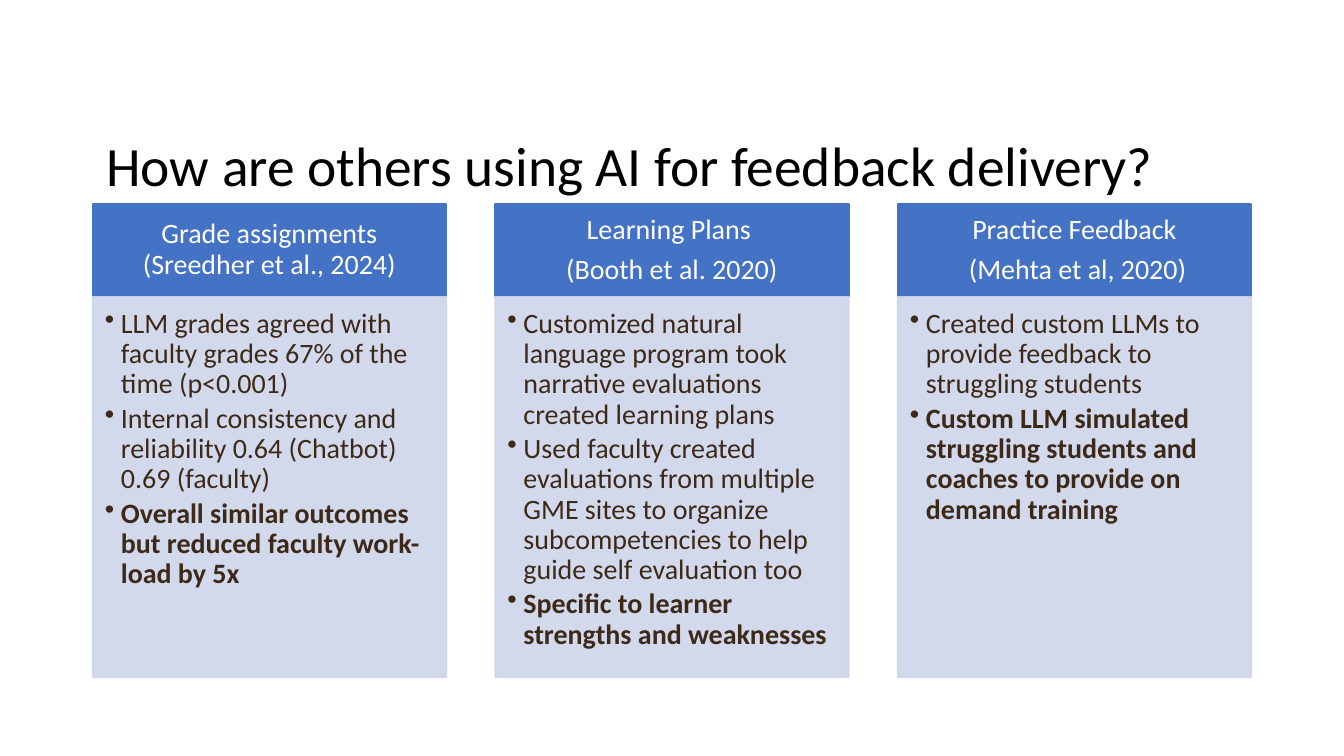
import dataclasses

import lxml.etree
import pptx
import pptx.dml.color
import pptx.enum.shapes
import pptx.enum.text
import pptx.oxml.ns
import pptx.util

Inches = pptx.util.Inches
RGBColor = pptx.dml.color.RGBColor
Align = pptx.enum.text.PP_ALIGN
Anchor = pptx.enum.text.MSO_ANCHOR
qn = pptx.oxml.ns.qn

BLACK = RGBColor(0x00, 0x00, 0x00)
WHITE = RGBColor(0xFF, 0xFF, 0xFF)
BLUE = RGBColor(0x44, 0x72, 0xC4)
PALE_BLUE = RGBColor(0xCF, 0xD5, 0xEA)
BROWN = RGBColor(0x3D, 0x29, 0x17)

SLIDE_WIDTH = Inches(10)
SLIDE_HEIGHT = SLIDE_WIDTH * 9 // 16  # widescreen
LEFT, CONTENT_WIDTH = 0.69, 8.62
COLUMN_WIDTH = 2.63
HEADER_TOP, HEADER_HEIGHT = 1.52, 0.68
BODY_TOP, BODY_HEIGHT = 2.21, 2.83
HANGING_INDENT = 0.12


@dataclasses.dataclass
class Study:
    heading: list[str]
    findings: list[str]  # the last one is the key finding, in bold


STUDIES = [
    Study(
        ["Grade assignments (Sreedher et al., 2024)"],
        [
            "LLM grades agreed with faculty grades 67% of the time (p<0.001)",
            "Internal consistency and reliability 0.64 (Chatbot) 0.69 (faculty)",
            "Overall similar outcomes but reduced faculty work-load by 5x",
        ],
    ),
    Study(
        ["Learning Plans ", "(Booth et al. 2020)"],
        [
            "Customized natural language program took narrative evaluations "
            "created learning plans",
            "Used faculty created evaluations from multiple GME sites to "
            "organize subcompetencies to help guide self evaluation too",
            "Specific to learner strengths and weaknesses",
        ],
    ),
    Study(
        ["Practice Feedback", " (Mehta et al, 2020)"],
        [
            "Created custom LLMs to provide feedback to struggling students",
            "Custom LLM simulated struggling students and coaches to provide "
            "on demand training",
        ],
    ),
]


def write_text(frame, lines: list[str], *, size: float, color: RGBColor,
               align=Align.LEFT, anchor=Anchor.MIDDLE,
               insets=(0.1, 0.05, 0.1, 0.05), space_after: float = 0,
               bulleted: bool = False, bold_last: bool = False) -> None:
    frame.word_wrap = True
    frame.auto_size = pptx.enum.text.MSO_AUTO_SIZE.NONE
    frame.vertical_anchor = anchor
    (frame.margin_left, frame.margin_top,
     frame.margin_right, frame.margin_bottom) = map(Inches, insets)
    for number, line in enumerate(lines):
        paragraph = frame.add_paragraph() if number else frame.paragraphs[0]
        if bulleted:
            properties = paragraph._p.get_or_add_pPr()
            properties.set("marL", str(Inches(HANGING_INDENT)))
            properties.set("indent", str(-Inches(HANGING_INDENT)))
            bullet = lxml.etree.SubElement(properties, qn("a:buChar"))
            bullet.set("char", "•")
        paragraph.alignment = align
        paragraph.line_spacing = 0.9
        paragraph.space_after = pptx.util.Pt(space_after)
        paragraph.font.size = pptx.util.Pt(size)  # also sizes the bullet
        run = paragraph.add_run()
        run.text = line
        run.font.name = "Calibri"
        run.font.size = pptx.util.Pt(size)
        run.font.color.rgb = color
        run.font.bold = bold_last and number == len(lines) - 1


def add_panel(slide, left: float, top: float, height: float,
              color: RGBColor, opacity: int = 100):
    panel = slide.shapes.add_shape(
        pptx.enum.shapes.MSO_SHAPE.RECTANGLE, Inches(left), Inches(top),
        Inches(COLUMN_WIDTH), Inches(height))
    panel.shadow.inherit = False
    panel.fill.solid()
    panel.fill.fore_color.rgb = color
    panel.line.color.rgb = color
    panel.line.width = pptx.util.Pt(1)
    if opacity < 100:
        for swatch in panel._element.spPr.iter(qn("a:srgbClr")):
            alpha = lxml.etree.SubElement(swatch, qn("a:alpha"))
            alpha.set("val", str(opacity * 1000))
    return panel


def add_study(slide, study: Study, left: float) -> None:
    header = add_panel(slide, left, HEADER_TOP, HEADER_HEIGHT, BLUE)
    write_text(header.text_frame, study.heading, size=15, color=WHITE,
               align=Align.CENTER, insets=(0.12, 0.07, 0.12, 0.07),
               space_after=5.25)
    body = add_panel(slide, left, BODY_TOP, BODY_HEIGHT, PALE_BLUE, opacity=90)
    write_text(body.text_frame, study.findings, size=15, color=BROWN,
               anchor=Anchor.TOP, insets=(0.09, 0.09, 0.12, 0.13),
               space_after=2.25, bulleted=True, bold_last=True)


def main() -> None:
    deck = pptx.Presentation()
    deck.slide_width, deck.slide_height = SLIDE_WIDTH, SLIDE_HEIGHT
    slide = deck.slides.add_slide(deck.slide_layouts.get_by_name("Title Only"))

    # Title
    title = slide.shapes.title
    title.left, title.top = Inches(LEFT), Inches(0.71)
    title.width, title.height = Inches(CONTENT_WIDTH), Inches(1.09)
    write_text(title.text_frame,
               ["How are others using AI for feedback delivery?"],
               size=29.7, color=BLACK)

    # One column per study, spread evenly over the content width
    step = (CONTENT_WIDTH - COLUMN_WIDTH) / (len(STUDIES) - 1)
    for column, study in enumerate(STUDIES):
        add_study(slide, study, LEFT + column * step)

    deck.save("out.pptx")


if __name__ == "__main__":
    main()
